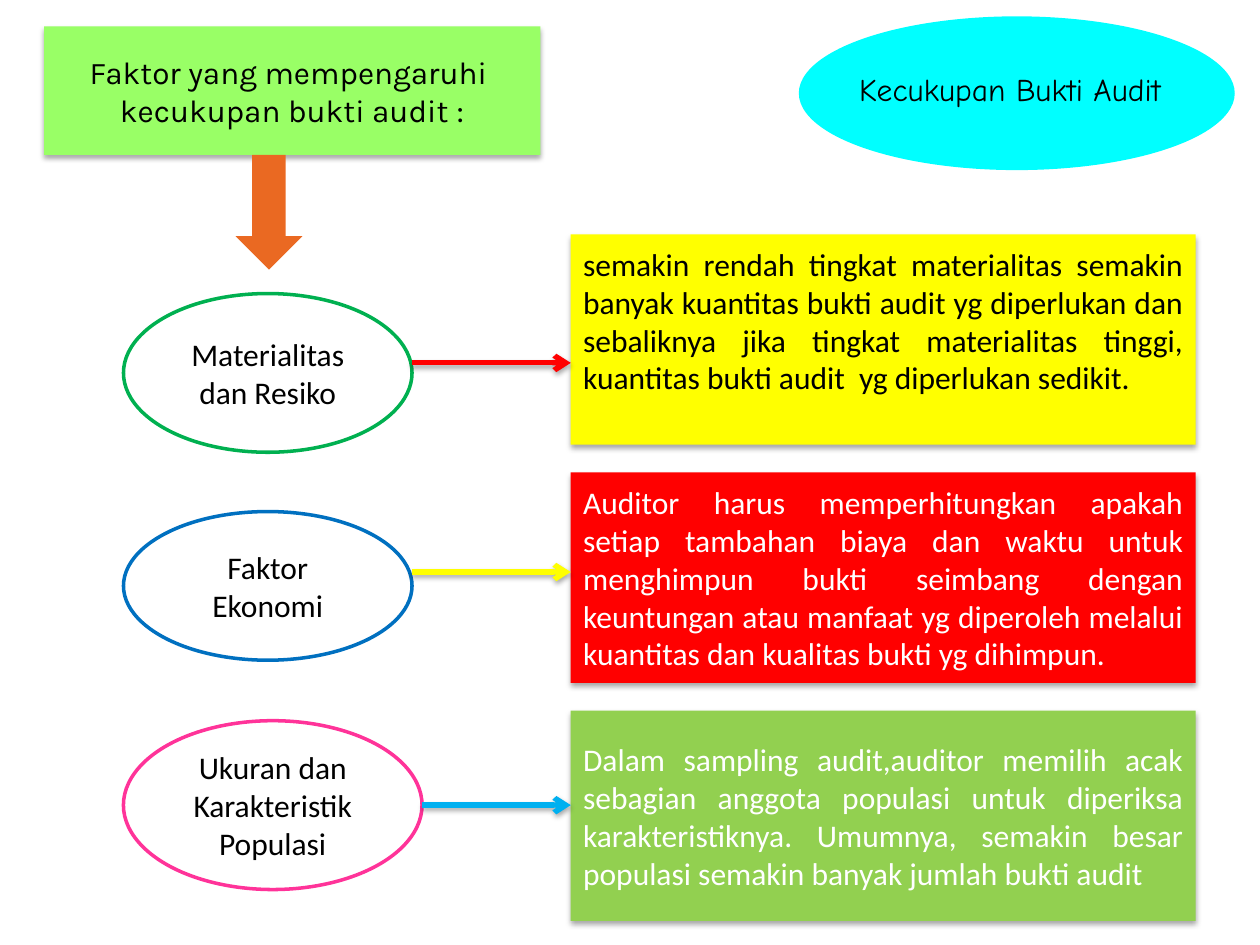
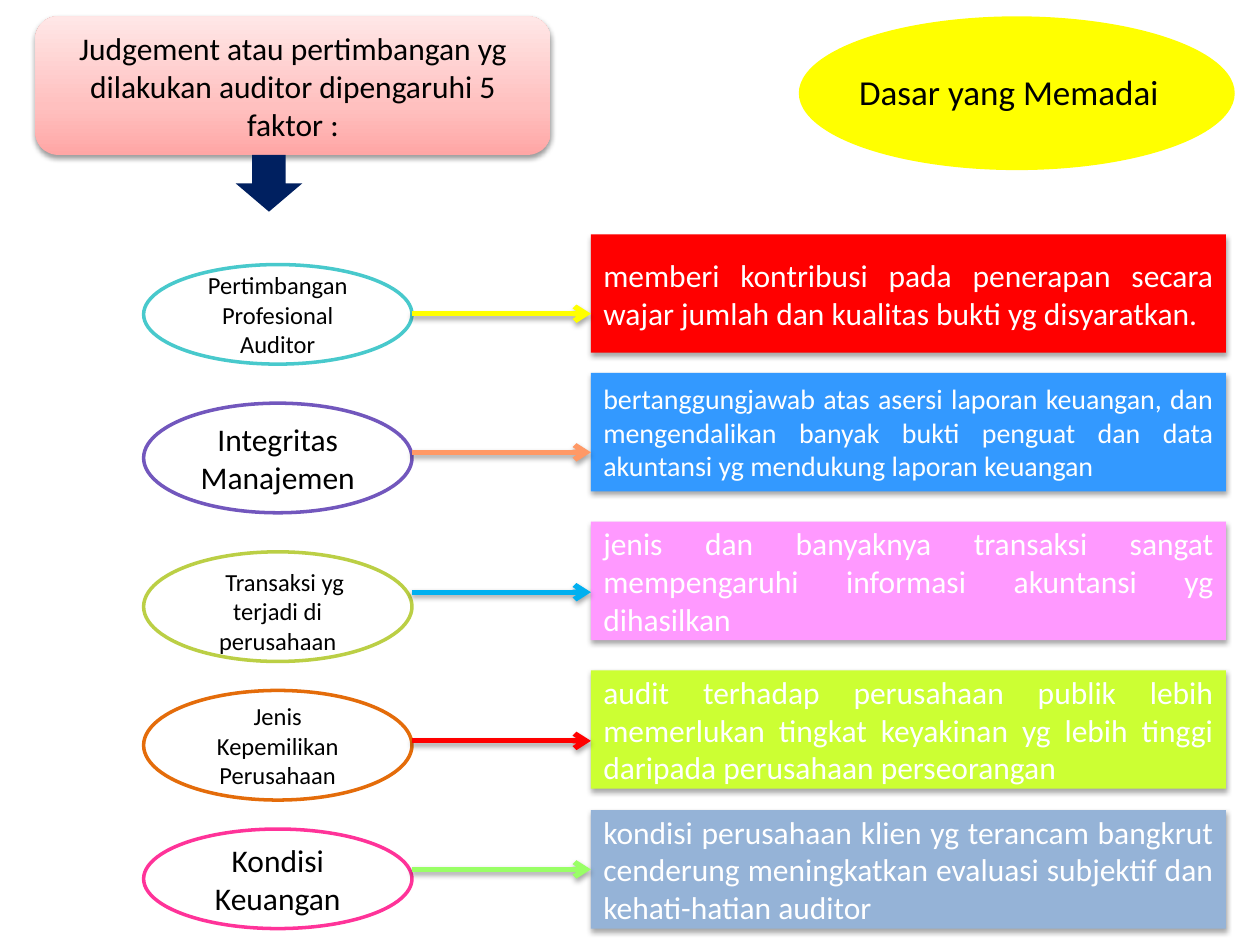
from collections import namedtuple
from copy import deepcopy

from lxml import etree
from pptx import Presentation
from pptx.dml.color import RGBColor
from pptx.enum import shapes, text
from pptx.oxml import ns
from pptx.util import Inches, Pt

# Shared look
FONT = "Calibri"
BLACK, WHITE = "000000", "FFFFFF"
CENTER, JUSTIFY = text.PP_ALIGN.CENTER, text.PP_ALIGN.JUSTIFY
HEADING_BOTTOM = 1.23
SNAP = 0.02  # an arrow this near the middle of a box is joined to it

# One row: factor oval, arrow and explanation box
Factor = namedtuple("Factor", "label label_size oval_top oval_width oval_height oval_color "
                              "arrow_y arrow_color note note_size note_color box_top box_color")
Layout = namedtuple("Layout", "oval_left box_left box_width box_height")

SUFFICIENCY_LAYOUT = Layout(0.98, 4.53, 4.96, 1.67)
SUFFICIENCY_FACTORS = [
    Factor("Materialitas dan Resiko", 18, 2.33, 2.29, 1.26, "00B050", 2.88, "FF0000",
           "semakin rendah tingkat materialitas semakin banyak kuantitas bukti audit yg "
           "diperlukan dan sebaliknya jika tingkat materialitas tinggi, kuantitas bukti "
           "audit  yg diperlukan sedikit.", 18, BLACK, 1.86, "FFFF00"),
    Factor("Faktor Ekonomi", 18, 4.06, 2.29, 1.18, "0070C0", 4.54, "FFFF00",
           "Auditor harus memperhitungkan apakah setiap tambahan biaya dan waktu untuk "
           "menghimpun bukti seimbang dengan keuntungan atau manfaat yg diperoleh melalui "
           "kuantitas dan kualitas bukti yg dihimpun.", 18, WHITE, 3.75, "FF0000"),
    Factor("Ukuran dan Karakteristik Populasi", 18, 5.72, 2.37, 1.34, "FF3399", 6.39, "00B0F0",
           "Dalam sampling audit,auditor memilih acak sebagian anggota populasi untuk "
           "diperiksa karakteristiknya. Umumnya, semakin besar populasi semakin banyak "
           "jumlah bukti audit", 18, WHITE, 5.64, "92D050"),
]

JUDGEMENT_LAYOUT = Layout(1.14, 4.69, 5.04, 0.94)
JUDGEMENT_FACTORS = [
    Factor("Pertimbangan Profesional Auditor", 14, 2.1, 2.13, 0.79, "48C9CC", 2.49, "FFFF00",
           "memberi kontribusi pada penerapan secara wajar jumlah dan kualitas bukti yg "
           "disyaratkan.", 18, WHITE, 1.86, "FF0000"),
    Factor("Integritas Manajemen", 18, 3.2, 2.13, 0.87, "7257BD", 3.59, "FF9966",
           "bertanggungjawab atas asersi laporan keuangan, dan mengendalikan banyak bukti "
           "penguat dan data akuntansi yg mendukung laporan keuangan",
           16, WHITE, 2.96, "3399FF"),
    Factor("Transaksi yg terjadi di perusahaan", 14, 4.38, 2.13, 0.87, "BBCF45", 4.7, "00B0F0",
           "jenis dan banyaknya transaksi sangat mempengaruhi informasi akuntansi yg "
           "dihasilkan", 18, WHITE, 4.14, "FF99FF"),
    Factor("Jenis Kepemilikan Perusahaan", 14, 5.48, 2.13, 0.87, "E46C0A", 5.88, "FF0000",
           "audit terhadap perusahaan publik lebih memerlukan tingkat keyakinan yg lebih "
           "tinggi daripada perusahaan perseorangan", 18, WHITE, 5.32, "CCFF33"),
    Factor("Kondisi Keuangan", 18, 6.58, 2.13, 0.79, "FF3399", 6.9, "99FF66",
           "kondisi perusahaan klien yg terancam bangkrut cenderung meningkatkan evaluasi "
           "subjektif dan kehati-hatian auditor", 18, WHITE, 6.43, "95B3D7"),
]


def rgb(color):
    return RGBColor.from_string(color)


def add_shadow(shape, opacity=35):
    """Put a soft shadow below a shape or connector."""
    properties = shape._element.spPr
    effects = properties.find(ns.qn("a:effectLst"))
    if effects is None:
        effects = etree.SubElement(properties, ns.qn("a:effectLst"))
    shadow = etree.SubElement(effects, ns.qn("a:outerShdw"), blurRad=str(Pt(3.1)),
                              dist=str(Pt(1.8)), dir="5400000", rotWithShape="0")
    color = etree.SubElement(shadow, ns.qn("a:srgbClr"), val=BLACK)
    etree.SubElement(color, ns.qn("a:alpha"), val=str(opacity * 1000))


def add_block(slide, kind, left, top, width, height, fill, line=None):
    shape = slide.shapes.add_shape(kind, Inches(left), Inches(top), Inches(width), Inches(height))
    shape.shadow.inherit = False
    shape.fill.solid()
    shape.fill.fore_color.rgb = rgb(fill)
    if line:
        shape.line.color.rgb = rgb(line)
        shape.line.width = Pt(2)
    else:
        shape.line.fill.background()
    return shape


def add_run(paragraph, words, size, color=BLACK, font=FONT):
    run = paragraph.add_run()
    run.text = words
    run.font.size = Pt(size)
    run.font.name = font
    run.font.color.rgb = rgb(color)


def write(shape, words, size, color=BLACK, align=CENTER):
    frame = shape.text_frame
    frame.word_wrap = True
    frame.vertical_anchor = text.MSO_ANCHOR.MIDDLE
    paragraph = frame.paragraphs[0]
    paragraph.alignment = align
    add_run(paragraph, words, size, color)


def add_badge(slide, topic, size, font, color):
    """Topic oval in the upper right corner."""
    add_block(slide, shapes.MSO_SHAPE.OVAL, 6.34, 0.13, 3.46, 1.22, color)
    box = slide.shapes.add_textbox(Inches(6.72), Inches(0.51), Inches(3.09), Inches(0.4))
    box.text_frame.word_wrap = True
    box.text_frame.auto_size = text.MSO_AUTO_SIZE.SHAPE_TO_FIT_TEXT
    add_run(box.text_frame.paragraphs[0], topic, size, font=font)


def add_down_arrow(slide, height, color):
    add_block(slide, shapes.MSO_SHAPE.DOWN_ARROW, 1.87, HEADING_BOTTOM, 0.53, height, color)


def add_arrow(slide, start, end, y, color):
    arrow = slide.shapes.add_connector(shapes.MSO_CONNECTOR.STRAIGHT, Inches(start), Inches(y),
                                       Inches(end), Inches(y))
    arrow.line.color.rgb = rgb(color)
    arrow.line.width = Pt(3)
    etree.SubElement(arrow.line._get_or_add_ln(), ns.qn("a:tailEnd"), type="arrow")
    add_shadow(arrow)
    return arrow


def add_factor(slide, layout, factor):
    """Draw one row and return its oval and its box."""
    oval = add_block(slide, shapes.MSO_SHAPE.OVAL, layout.oval_left, factor.oval_top,
                     factor.oval_width, factor.oval_height, WHITE, factor.oval_color)
    write(oval, factor.label, factor.label_size)
    box = add_block(slide, shapes.MSO_SHAPE.RECTANGLE, layout.box_left, factor.box_top,
                    layout.box_width, layout.box_height, factor.box_color)
    add_shadow(box)
    write(box, factor.note, factor.note_size, factor.note_color, JUSTIFY)
    arrow = add_arrow(slide, layout.oval_left + factor.oval_width, layout.box_left,
                      factor.arrow_y, factor.arrow_color)
    if abs(factor.box_top + layout.box_height / 2 - factor.arrow_y) < SNAP:
        arrow.end_connect(box, 1)
    return oval, box


def fill_gradient(shape, colors):
    """Fill upwards with (position, colour) stops."""
    shape.fill.gradient()
    shape.fill.gradient_angle = 90
    stop_list = shape._element.spPr.find(".//" + ns.qn("a:gsLst"))
    while len(stop_list) < len(colors):
        stop_list.append(deepcopy(stop_list[0]))
    for stop, (position, color) in zip(shape.fill.gradient_stops, colors):
        stop.position = position
        stop.color.rgb = rgb(color)


def build_sufficiency(slide):
    add_badge(slide, "Kecukupan Bukti Audit", 18, "Comic Neue", "00FFFF")

    # Heading in two lines
    heading = add_block(slide, shapes.MSO_SHAPE.RECTANGLE, 0.35, 0.21, 3.94, 1.02, "99FF66")
    add_shadow(heading)
    write(heading, "", 18)
    frame = heading.text_frame
    frame.clear()
    lines = [[("Faktor yang mempengaruhi ", "Karla")],
             [("kecukupan bukti audit ", "Karla"), (":", FONT)]]
    for index, runs in enumerate(lines):
        paragraph = frame.add_paragraph() if index else frame.paragraphs[0]
        paragraph.alignment = CENTER
        for words, font in runs:
            add_run(paragraph, words, 18, font=font)
    add_down_arrow(slide, 0.91, "EA6922")

    # Factors; the first note sits higher in its box
    rows = [add_factor(slide, SUFFICIENCY_LAYOUT, factor) for factor in SUFFICIENCY_FACTORS]
    rows[0][1].text_frame.margin_bottom = Inches(0.35)


def build_judgement(slide):
    add_badge(slide, "Dasar yang Memadai", 20, FONT, "FFFF00")

    # Heading
    heading = add_block(slide, shapes.MSO_SHAPE.ROUNDED_RECTANGLE, 0.28, 0.13, 4.09, 1.1, "FFC0BF")
    fill_gradient(heading, [(0, "FFA6A5"), (0.35, "FFC0BF"), (1, "FFE7E7")])
    add_shadow(heading, 38)
    write(heading, "Judgement atau pertimbangan yg dilakukan auditor dipengaruhi 5 faktor :", 18)
    add_down_arrow(slide, 0.45, "002060")

    # Factors; the transaction label is lowered and its first line indented
    rows = [add_factor(slide, JUDGEMENT_LAYOUT, factor) for factor in JUDGEMENT_FACTORS]
    frame = rows[2][0].text_frame
    frame.margin_top = Inches(0.12)
    frame.paragraphs[0]._p.get_or_add_pPr().set("indent", str(Inches(0.11)))


def main():
    presentation = Presentation()
    presentation.slide_width = Inches(10)
    presentation.slide_height = Inches(7.5)
    blank = presentation.slide_layouts[6]
    for build in (build_sufficiency, build_judgement):
        build(presentation.slides.add_slide(blank))
    presentation.save("out.pptx")


if __name__ == "__main__":
    main()
